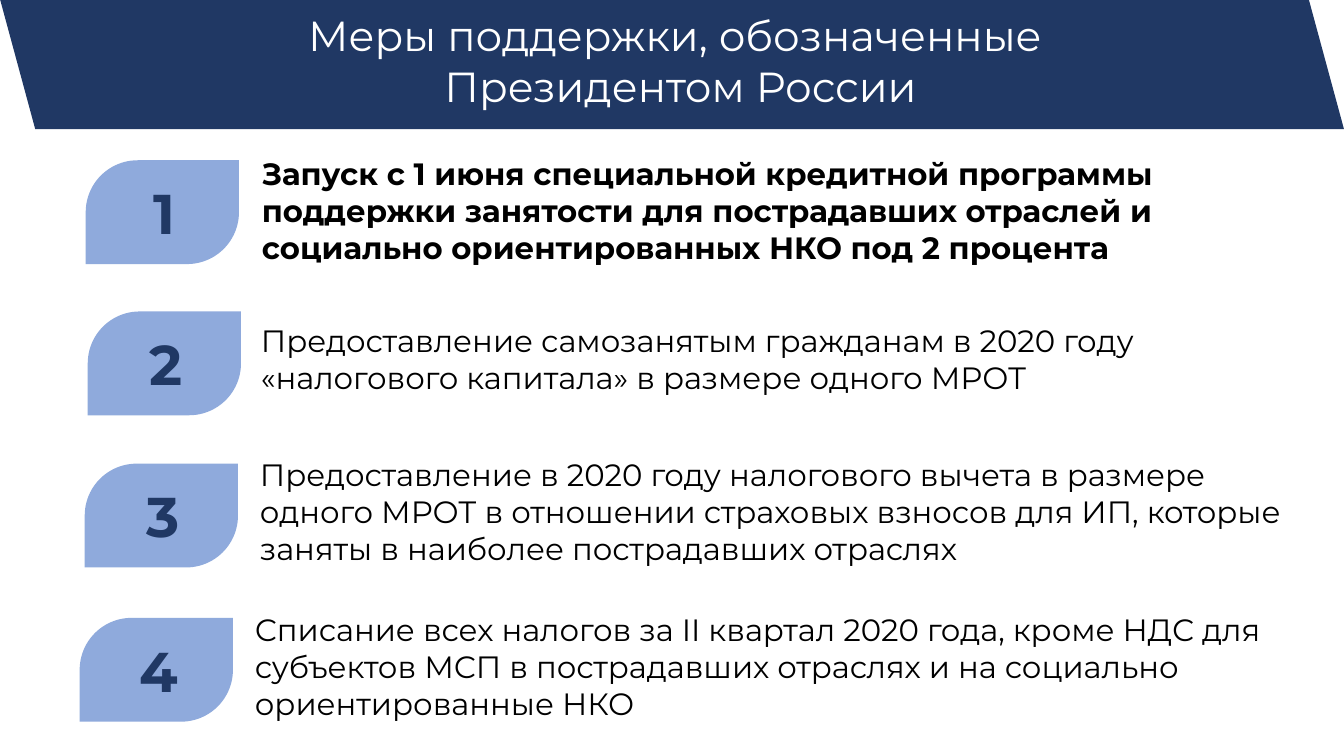
from pptx import Presentation
from pptx.dml.color import RGBColor
from pptx.enum import shapes, text
from pptx.util import Inches, Pt

FONT = "Montserrat"
NAVY, BLUE, WHITE, BLACK = "203864", "8FAADC", "FFFFFF", "000000"
TITLE = ["Меры поддержки, обозначенные ", "Президентом России"]
BAND = [(0, -0.01), (12.98, -0.01), (13.33, 1.28), (0.35, 1.28)]
LEAF = (1.52, 1.03)
WIDE = 10.46

# leaf left, leaf top, text left, text top, text height, bold, wording
ITEMS = [
    (0.85, 1.59, 2.5, 1.49, 1.21, True,
     "Запуск с 1 июня специальной кредитной программы поддержки занятости "
     "для пострадавших отраслей и социально ориентированных НКО под 2 процента"),
    (0.87, 3.09, 2.49, 3.14, 0.84, False,
     "Предоставление самозанятым гражданам в 2020 году "
     "«налогового капитала» в размере одного МРОТ"),
    (0.84, 4.6, 2.48, 4.47, 1.21, False,
     "Предоставление в 2020 году налогового вычета в размере одного МРОТ "
     "в отношении страховых взносов для ИП, которые заняты "
     "в наиболее пострадавших отраслях"),
    (0.79, 6.13, 2.43, 6.01, 1.21, False,
     "Списание всех налогов за II квартал 2020 года, кроме НДС для субъектов "
     "МСП в пострадавших отраслях и на социально ориентированные НКО"),
]


def rgb(code):
    return RGBColor.from_string(code)


def paint(shape, code):
    shape.shadow.inherit = False
    shape.fill.solid()
    shape.fill.fore_color.rgb = rgb(code)
    shape.line.fill.background()


def write(frame, lines, size, code, bold=False, align=text.PP_ALIGN.LEFT):
    frame.word_wrap = True
    frame.text = "\n".join(lines)
    for par in frame.paragraphs:
        par.alignment = align
        font = par.font
        font.name, font.size, font.bold = FONT, Pt(size), bold
        font.color.rgb = rgb(code)


def add_text(box, *args, **opts):
    write(slide.shapes.add_textbox(*map(Inches, box)).text_frame, *args, **opts)


def add_leaf(left, top, num):
    leaf = slide.shapes.add_shape(
        shapes.MSO_SHAPE.ROUND_2_DIAG_RECTANGLE,
        *map(Inches, (left, top, *LEAF)))
    leaf.adjustments[0], leaf.adjustments[1] = 0.5, 0
    paint(leaf, BLUE)
    frame = leaf.text_frame
    frame.vertical_anchor = text.MSO_ANCHOR.MIDDLE
    frame.margin_top = frame.margin_bottom = 0
    frame.margin_left, frame.margin_right = Inches(0.04), 0
    write(frame, [str(num)], 40, NAVY, True, text.PP_ALIGN.CENTER)


deck = Presentation()
deck.slide_width, deck.slide_height = Inches(13.33), Inches(7.5)
slide = deck.slides.add_slide(deck.slide_layouts[6])

points = [(Inches(x), Inches(y)) for x, y in BAND]
form = slide.shapes.build_freeform(*points[0])
form.add_line_segments(points[1:], close=True)
paint(form.convert_to_shape(), NAVY)
add_text((0.52, 0.05, 12.46, 1.11), TITLE, 30, WHITE,
         align=text.PP_ALIGN.CENTER)

for num, (x, y, left, top, high, bold, words) in enumerate(ITEMS, 1):
    add_leaf(x, y, num)
    add_text((left, top, WIDE, high), [words], 22, BLACK, bold)

deck.save("out.pptx")
